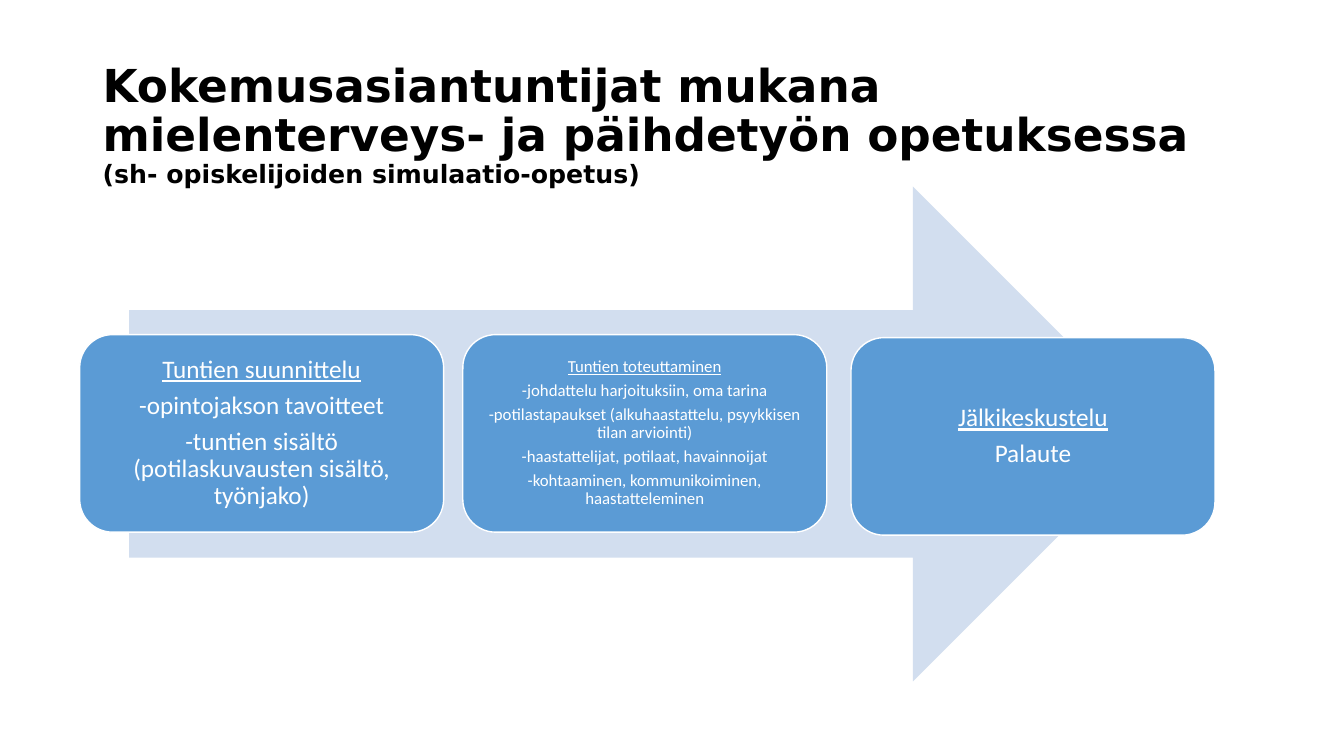
from pptx import Presentation
from pptx.dml.color import RGBColor
from pptx.enum import shapes, text
from pptx.util import Inches, Pt

BLACK = RGBColor(0x00, 0x00, 0x00)
WHITE = RGBColor(0xFF, 0xFF, 0xFF)
BLUE = RGBColor(0x5B, 0x9B, 0xD5)
PALE_BLUE = RGBColor(0xD2, 0xDE, 0xEF)

STAGE_WIDTH, STAGE_HEIGHT = 3.61, 1.96
STAGES = [
    (0.79, 3.32, 18, 0.17, [
        "Tuntien suunnittelu",
        "-opintojakson tavoitteet",
        "-tuntien sisältö (potilaskuvausten sisältö, työnjako)",
    ]),
    (4.59, 3.32, 12, 0.15, [
        "Tuntien toteuttaminen",
        "-johdattelu harjoituksiin, oma tarina",
        "-potilastapaukset (alkuhaastattelu, psyykkisen tilan arviointi)",
        "-haastattelijat, potilaat, havainnoijat",
        "-kohtaaminen, kommunikoiminen, haastatteleminen",
    ]),
    (8.44, 3.35, 18, 0.17, ["Jälkikeskustelu", "Palaute"]),
]


def style_run(run, font_name, size, color):
    run.font.name = font_name
    run.font.size = Pt(size)
    run.font.color.rgb = color


def add_title(slide):
    title = slide.shapes.add_textbox(Inches(0.92), Inches(0.58), Inches(11.5), Inches(1.45))
    frame = title.text_frame
    frame.word_wrap = True
    frame.text = (
        "Kokemusasiantuntijat mukana mielenterveys- ja päihdetyön opetuksessa"
        "\v(sh- opiskelijoiden simulaatio-opetus)"
    )
    heading = frame.paragraphs[0]
    heading.line_spacing = 0.9
    for run, size in zip(heading.runs, (32.4, 18)):
        style_run(run, "DejaVu Sans", size, BLACK)
        run.font.bold = True


def add_filled_shape(slide, preset, left, top, width, height, color):
    shape = slide.shapes.add_shape(
        preset, Inches(left), Inches(top), Inches(width), Inches(height))
    shape.shadow.inherit = False
    shape.fill.solid()
    shape.fill.fore_color.rgb = color
    shape.line.fill.background()
    return shape


def add_stage(slide, left, top, size, inset, lines):
    stage = add_filled_shape(
        slide, shapes.MSO_SHAPE.ROUNDED_RECTANGLE, left, top, STAGE_WIDTH, STAGE_HEIGHT, BLUE)
    stage.line.color.rgb = WHITE
    stage.line.width = Pt(1)
    frame = stage.text_frame
    frame.word_wrap = True
    frame.vertical_anchor = text.MSO_ANCHOR.MIDDLE
    frame.margin_left = frame.margin_right = Inches(inset)
    frame.margin_top = frame.margin_bottom = Inches(inset)
    frame.text = "\n".join(lines)
    for index, paragraph in enumerate(frame.paragraphs):
        paragraph.alignment = text.PP_ALIGN.CENTER
        paragraph.line_spacing = 0.9
        paragraph.space_after = Pt(size * 0.35)
        for run in paragraph.runs:
            style_run(run, "Calibri", size, WHITE)
            run.font.underline = index == 0


def main():
    presentation = Presentation()
    presentation.slide_width = Inches(13.33)
    presentation.slide_height = Inches(7.5)
    slide = presentation.slides.add_slide(presentation.slide_layouts[6])
    add_title(slide)
    add_filled_shape(
        slide, shapes.MSO_SHAPE.RIGHT_ARROW, 1.28, 1.85, 10.23, 4.91, PALE_BLUE)
    for stage in STAGES:
        add_stage(slide, *stage)
    presentation.save("out.pptx")


if __name__ == "__main__":
    main()
